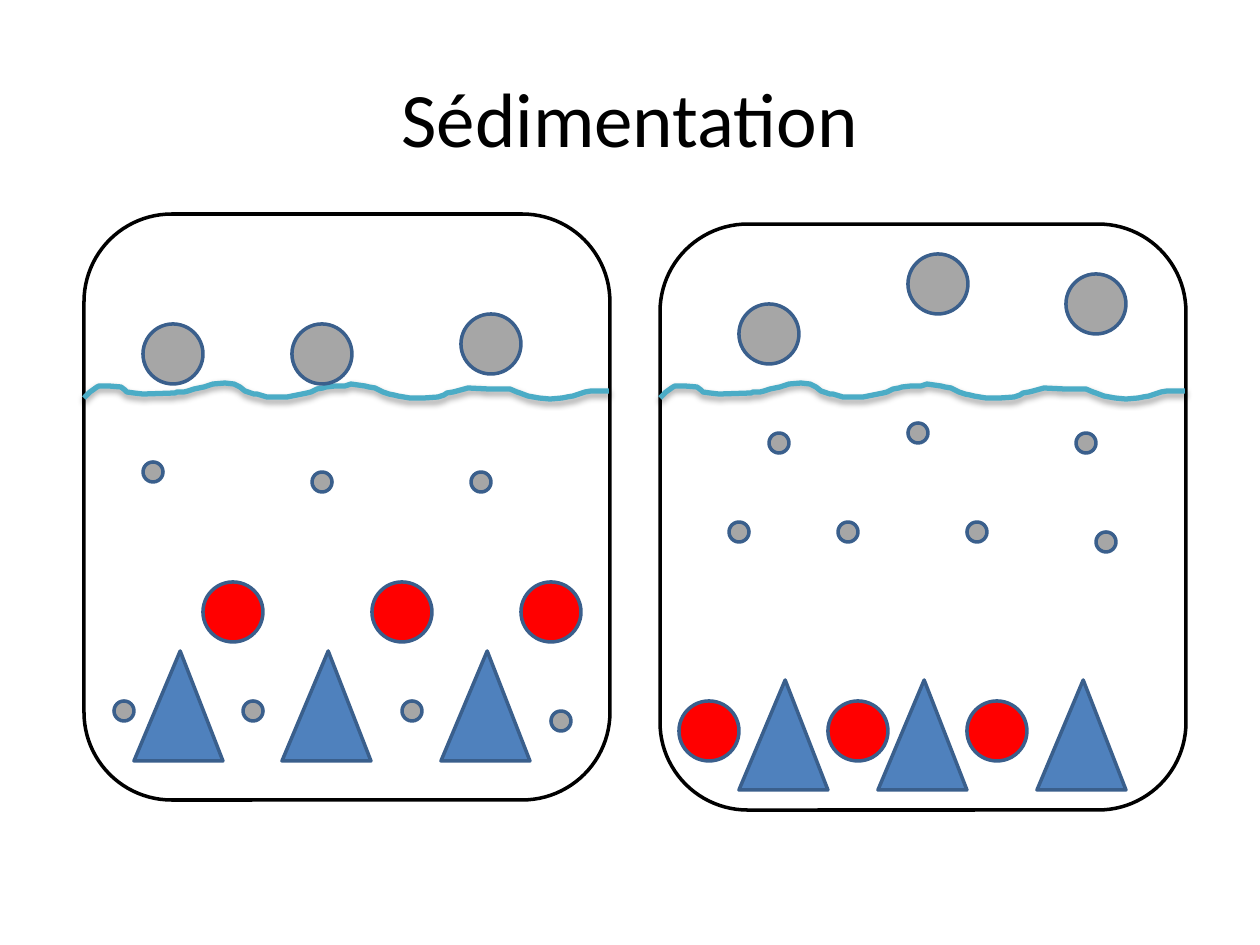
from lxml.etree import SubElement
from pptx import Presentation
from pptx.dml.color import RGBColor
from pptx.enum.shapes import MSO_SHAPE
from pptx.enum.text import MSO_ANCHOR, PP_ALIGN
from pptx.oxml.ns import qn
from pptx.util import Emu, Pt

SCALE = 914400 / 126


def px(n):
    return Emu(round(n * SCALE))


def color(code):
    return RGBColor.from_string(code)


deck = Presentation()
deck.slide_width, deck.slide_height = px(1260), px(945)
slide = deck.slides.add_slide(deck.slide_layouts[5])
shapes = slide.shapes

# Title
title = shapes.title
title.left, title.top, title.width, title.height = px(63), px(38), px(1134), px(157)
frame = title.text_frame
frame.vertical_anchor = MSO_ANCHOR.MIDDLE
para = frame.paragraphs[0]
para.alignment = PP_ALIGN.CENTER
run = para.add_run()
run.text = "Sédimentation"
run.font.name = "Calibri"
run.font.size = Pt(44)
run.font.color.rgb = color("000000")

# Water line, measured from the left wall of a jar
WATER = 383
WAVE = [
    (0, 15), (6, 9), (13, 4), (15, 3), (25, 3), (37, 4), (41, 7), (43, 9),
    (50, 10), (59, 11), (91, 10), (93, 9), (100, 9), (104, 8), (110, 6),
    (115, 5), (120, 4), (126, 2), (129, 1), (141, 0), (150, 1), (156, 4),
    (161, 8), (164, 9), (170, 11), (173, 11), (183, 14), (203, 14), (218, 11),
    (223, 10), (227, 9), (233, 6), (239, 5), (242, 4), (251, 3), (261, 3),
    (267, 1), (281, 3), (285, 4), (291, 5), (299, 9), (302, 10), (305, 11),
    (310, 12), (314, 13), (326, 15), (340, 15), (354, 14), (360, 12),
    (363, 10), (369, 9), (373, 8), (384, 5), (405, 6), (426, 6), (433, 9),
    (436, 10), (444, 13), (455, 15), (466, 16), (478, 15), (483, 14),
    (489, 13), (495, 11), (501, 9), (507, 8), (525, 8),
]

# Kinds of particle: preset, width, height, fill
KINDS = {
    "cone": (MSO_SHAPE.ISOSCELES_TRIANGLE, 89, 110, "4F81BD"),
    "red": (MSO_SHAPE.OVAL, 60, 60, "FF0000"),
    "gray": (MSO_SHAPE.OVAL, 60, 60, "A6A6A6"),
    "dot": (MSO_SHAPE.OVAL, 20, 20, "A6A6A6"),
}

# Jars: left, top, and the corners of the particles inside
JARS = [
    (84, 214, {
        "cone": [(134, 651), (282, 651), (441, 651)],
        "red": [(203, 582), (372, 582), (521, 582)],
        "gray": [(143, 324), (292, 324), (461, 314)],
        "dot": [(143, 462), (312, 472), (471, 472), (114, 701), (243, 701),
                (402, 701), (551, 711)],
    }),
    (660, 224, {
        "gray": [(739, 304), (908, 254), (1066, 274)],
        "dot": [(769, 433), (908, 423), (1076, 433), (729, 522), (838, 522),
                (967, 522), (1096, 532)],
        "red": [(679, 701), (828, 701), (967, 701)],
        "cone": [(739, 680), (878, 680), (1037, 680)],
    }),
]

for left, top, parts in JARS:
    # Glass
    jar = shapes.add_shape(MSO_SHAPE.ROUNDED_RECTANGLE,
                           px(left), px(top), px(526), px(586))
    jar.shadow.inherit = False
    jar.fill.background()
    jar.line.color.rgb = color("000000")
    jar.line.width = Pt(2)

    # Water surface with its soft shadow
    points = [(left + x, WATER + y) for x, y in WAVE]
    path = shapes.build_freeform(*points[0], scale=SCALE)
    path.add_line_segments(points[1:], close=False)
    wave = path.convert_to_shape()
    wave.fill.background()
    wave.line.color.rgb = color("4BACC6")
    wave.line.width = Pt(3)
    wave.shadow.inherit = False
    effect = wave.element.spPr.find(qn("a:effectLst"))
    shade = SubElement(effect, qn("a:outerShdw"), blurRad="40000",
                       dist="23000", dir="5400000", rotWithShape="0")
    tone = SubElement(shade, qn("a:srgbClr"), val="000000")
    SubElement(tone, qn("a:alpha"), val="35000")

    # Particles
    for kind, spots in parts.items():
        form, wide, high, fill = KINDS[kind]
        for x, y in spots:
            item = shapes.add_shape(form, px(x), px(y), px(wide), px(high))
            if kind == "cone":
                item.adjustments[0] = 0.52
            item.shadow.inherit = False
            item.fill.solid()
            item.fill.fore_color.rgb = color(fill)
            item.line.color.rgb = color("3A5F8C")
            item.line.width = Pt(2)

deck.save("out.pptx")
